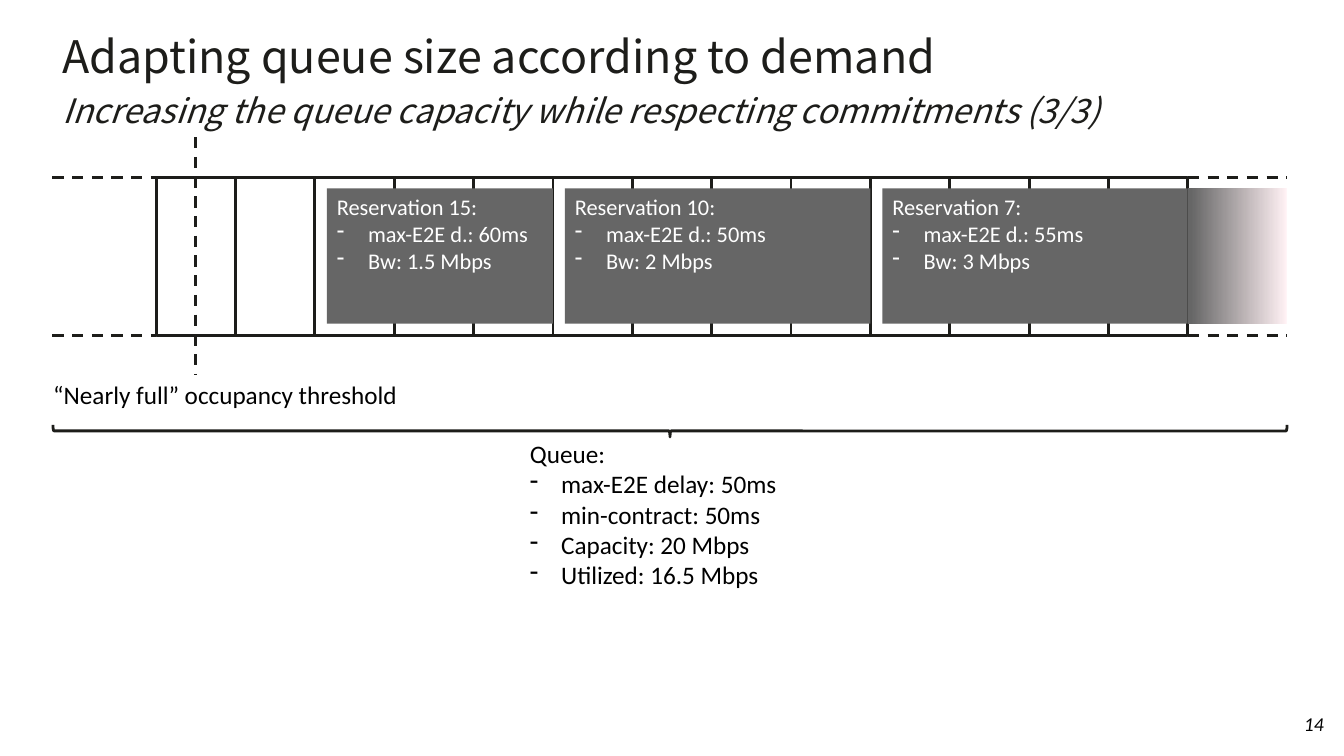
from dataclasses import dataclass

from lxml.etree import SubElement
from pptx import Presentation
from pptx.dml.color import RGBColor
from pptx.enum.dml import MSO_LINE
from pptx.enum.shapes import MSO_CONNECTOR, MSO_SHAPE
from pptx.enum.text import MSO_ANCHOR, PP_ALIGN
from pptx.oxml.ns import qn
from pptx.shapes.autoshape import Shape
from pptx.slide import Slide
from pptx.text.text import TextFrame, _Paragraph
from pptx.util import Inches, Pt

COLORS = {"ink": "1D1D1A", "black": "000000", "white": "FFFFFF",
          "block": "666666", "fade": "FFF1F4"}
BODY_FONT = "Calibri"
TITLE_FONT = "Noto Sans CJK SC"

LEFT, RIGHT = 0.52, 12.77
QUEUE_LEFT, QUEUE_RIGHT = 1.55, 11.79
QUEUE_TOP, QUEUE_BOTTOM = 1.76, 3.33
CELL_COUNT = 13
CELL = (QUEUE_RIGHT - QUEUE_LEFT) / CELL_COUNT
GAP = 0.12
BLOCK_TOP, BLOCK_HEIGHT = 1.87, 1.34
THRESHOLD_X = 1.94


@dataclass
class Reservation:
    number: int
    first_cell: int
    cells: int
    delay: str
    bandwidth: str


@dataclass
class DashedLine:
    x1: float
    y1: float
    x2: float
    y2: float


RESERVATIONS = [
    Reservation(7, 9, 4, "55ms", "3 Mbps"),
    Reservation(10, 5, 4, "50ms", "2 Mbps"),
    Reservation(15, 2, 3, "60ms", "1.5 Mbps"),
]
DASHED_LINES = [
    DashedLine(x1, y, x2, y)
    for x1, x2 in ((LEFT, QUEUE_LEFT), (QUEUE_RIGHT, RIGHT))
    for y in (QUEUE_TOP, QUEUE_BOTTOM)
] + [DashedLine(THRESHOLD_X, 1.36, THRESHOLD_X, 3.72)]
QUEUE_FACTS = ["max-E2E delay: 50ms", "min-contract: 50ms",
               "Capacity: 20 Mbps", "Utilized: 16.5 Mbps"]


def rgb(name: str) -> RGBColor:
    return RGBColor.from_string(COLORS[name])


def style_paragraph(p: _Paragraph, size: float, color: str, font: str = BODY_FONT) -> None:
    p.font.size = Pt(size)
    p.font.name = font
    p.font.color.rgb = rgb(color)


def add_outline(slide: Slide, kind: MSO_SHAPE, x: float, y: float, w: float, h: float) -> Shape:
    sp = slide.shapes.add_shape(kind, Inches(x), Inches(y), Inches(w), Inches(h))
    sp.shadow.inherit = False
    sp.fill.background()
    sp.line.color.rgb = rgb("ink")
    sp.line.width = Pt(2)
    return sp


def add_block(slide: Slide, x: float, w: float) -> Shape:
    sp = slide.shapes.add_shape(MSO_SHAPE.RECTANGLE, Inches(x), Inches(BLOCK_TOP),
                                Inches(w), Inches(BLOCK_HEIGHT))
    sp.shadow.inherit = False
    sp.fill.solid()
    sp.fill.fore_color.rgb = rgb("block")
    sp.line.fill.background()
    return sp


def add_dashed_line(slide: Slide, line: DashedLine) -> None:
    cxn = slide.shapes.add_connector(MSO_CONNECTOR.STRAIGHT, Inches(line.x1), Inches(line.y1),
                                     Inches(line.x2), Inches(line.y2))
    cxn.line.color.rgb = rgb("ink")
    cxn.line.width = Pt(2)
    cxn.line.dash_style = MSO_LINE.DASH
    SubElement(cxn._element.spPr, qn("a:effectLst"))


def add_text(slide: Slide, x: float, y: float, w: float, h: float,
             margin: float = 0) -> TextFrame:
    tf = slide.shapes.add_textbox(Inches(x), Inches(y), Inches(w), Inches(h)).text_frame
    tf.word_wrap = True
    tf.margin_left = tf.margin_right = Inches(margin)
    tf.margin_top = tf.margin_bottom = Inches(margin / 2)
    return tf


def write_list(tf: TextFrame, heading: str, items: list[str], size: float, color: str) -> None:
    tf.text = "\n".join([heading, *items])
    for i, p in enumerate(tf.paragraphs):
        p.alignment = PP_ALIGN.LEFT
        style_paragraph(p, size, color)
        if i:
            pPr = p._p.get_or_add_pPr()
            pPr.set("marL", str(Inches(0.31)))
            pPr.set("indent", str(-Inches(0.31)))
            bullet = pPr.makeelement(qn("a:buChar"), {"char": "-"})
            pPr.insert_element_before(bullet, "a:tabLst", "a:defRPr", "a:extLst")


def add_reservation(slide: Slide, res: Reservation) -> None:
    sp = add_block(slide, QUEUE_LEFT + res.first_cell * CELL + GAP, res.cells * CELL - GAP)
    tf = sp.text_frame
    tf.vertical_anchor = MSO_ANCHOR.TOP
    write_list(tf, f"Reservation {res.number}:",
               [f"max-E2E d.: {res.delay}", f"Bw: {res.bandwidth}"], 16, "white")


def add_fade(slide: Slide) -> None:
    sp = add_block(slide, QUEUE_RIGHT, RIGHT - QUEUE_RIGHT)
    sp.fill.gradient()
    sp.fill.gradient_angle = 180
    for stop, position, color in zip(sp.fill.gradient_stops, (0, 0.97), ("fade", "block")):
        stop.position = position
        stop.color.rgb = rgb(color)


def add_title(slide: Slide) -> None:
    p = add_text(slide, LEFT, 0.29, RIGHT - LEFT, 1.01, 0.1).paragraphs[0]
    p.line_spacing = Pt(34.4)
    style_paragraph(p, 32, "ink", TITLE_FONT)
    p.add_run().text = "Adapting queue size according to demand"
    p.add_line_break()
    r = p.add_run()
    r.text = "Increasing the queue capacity while respecting commitments (3/3)"
    r.font.size = Pt(24)
    r.font.italic = True


def add_page_number(slide: Slide) -> None:
    tf = add_text(slide, 12.44, 7.1, 0.9, 0.4)
    tf.margin_right = tf.margin_bottom = Inches(0.2)
    tf.vertical_anchor = MSO_ANCHOR.BOTTOM
    tf.text = "14"
    p = tf.paragraphs[0]
    p.alignment = PP_ALIGN.RIGHT
    p.line_spacing = 0.85
    style_paragraph(p, 14, "black")
    p.font.italic = True


def main() -> None:
    prs = Presentation()
    prs.slide_width, prs.slide_height = Inches(13.34), Inches(7.5)
    slide = prs.slides.add_slide(prs.slide_layouts[6])

    add_title(slide)
    for i in range(CELL_COUNT):
        add_outline(slide, MSO_SHAPE.RECTANGLE, QUEUE_LEFT + i * CELL, QUEUE_TOP,
                    CELL, QUEUE_BOTTOM - QUEUE_TOP)
    for line in DASHED_LINES:
        add_dashed_line(slide, line)
    for res in RESERVATIONS:
        add_reservation(slide, res)
    add_fade(slide)

    brace = add_outline(slide, MSO_SHAPE.RIGHT_BRACE, 6.59, -1.85, 0.12, RIGHT - LEFT)
    brace.rotation = 90
    write_list(add_text(slide, 5.26, 4.35, 2.78, 1.51), "Queue:", QUEUE_FACTS, 18, "black")

    tf = add_text(slide, LEFT, 3.76, 3.43, 0.3)
    tf.text = "“Nearly full” occupancy threshold"
    tf.paragraphs[0].alignment = PP_ALIGN.CENTER
    style_paragraph(tf.paragraphs[0], 18, "black")

    add_page_number(slide)
    prs.save("out.pptx")


if __name__ == "__main__":
    main()
